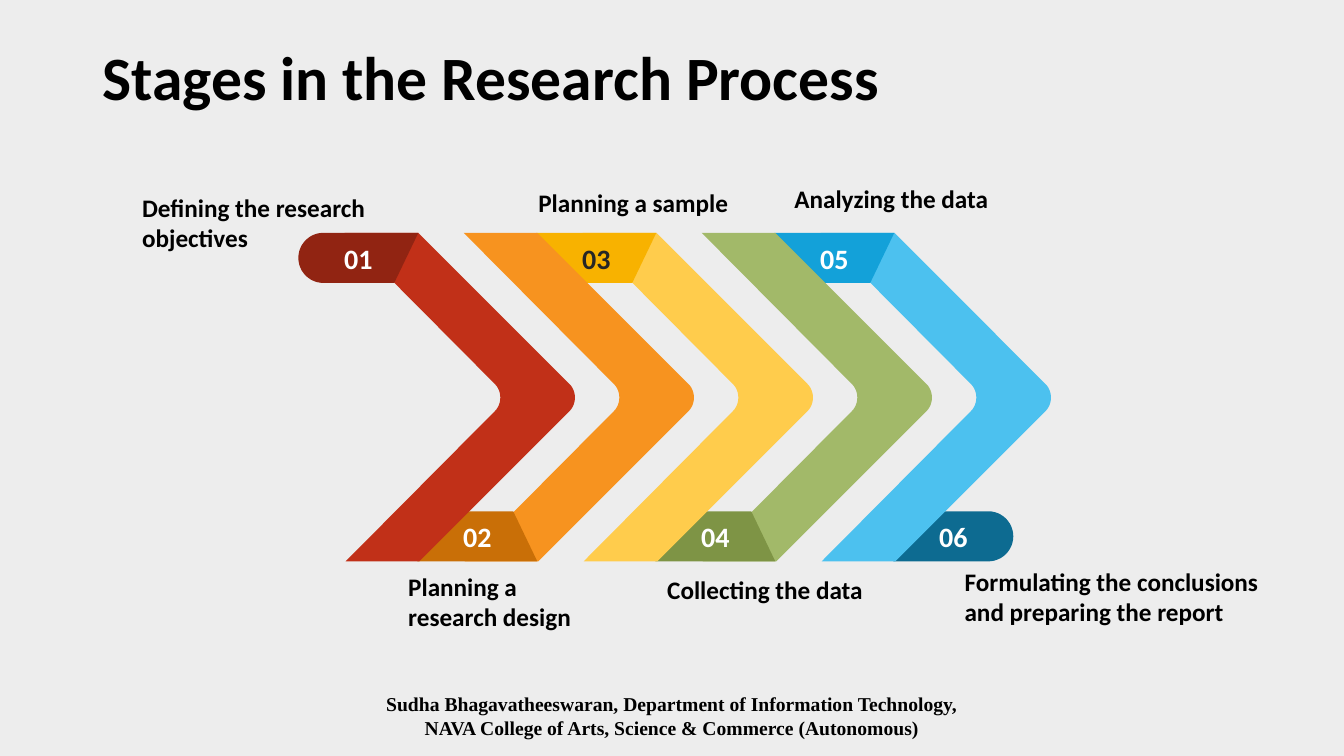
"""Build a slide of six research stages on interlocking chevrons."""
import math
from pptx import Presentation, util as u
from pptx.dml.color import RGBColor
from pptx.enum import text as t
from pptx.oxml.ns import qn

TITLE = "Stages in the Research Process"
CREDIT = ["Sudha Bhagavatheeswaran, Department of Information Technology,",
          "NAVA College of Arts, Science & Commerce (Autonomous)"]
BACK = "EDEDED"
TABS = [("01", "912412", "FFFFFF"), ("02", "C96F07", "FFFFFF"),
        ("03", "F8B200", "262626"), ("04", "7E9445", "FFFFFF"),
        ("05", "13A1D9", "FFFFFF"), ("06", "0D6B91", "FFFFFF")]
BANDS = ["C13018", "F7931F", "FFCC4C", "A2B969", "4CC1EF"]
LABELS = [("Defining the research objectives", 101.5, 133.2, 175.7, 51),
          ("Planning a research design", 291.6, 403.9, 119.5, 51),
          ("Planning a sample", 384.5, 129.6, 149.8, 29),
          ("Collecting the data", 476.6, 406.1, 146.2, 29),
          ("Analyzing the data", 567.4, 127.4, 157, 29),
          ("Formulating the conclusions and preparing the report",
           689, 400.3, 222.5, 51)]

TOP, HIGH, STEP = 166.3, 234.7, 85
BAND_X, TAB_X = 246.2, 213.1
TAB_W, TAB_H, RAD = 85.7, 35.8, 17.9
CUT, SLANT = 35.5, 68.5


def paint(fill, hue):
    fill.solid()
    fill.fore_color.rgb = RGBColor.from_string(hue)


def write(shape, lines, size, hue="000000", font="Calibri", align=t.PP_ALIGN.LEFT,
          anchor=t.MSO_ANCHOR.MIDDLE, inset=(7.2, 3.6), space=None):
    frame = shape.text_frame
    frame.word_wrap = True
    frame.vertical_anchor = anchor
    frame.margin_left = frame.margin_right = u.Pt(inset[0])
    frame.margin_top = frame.margin_bottom = u.Pt(inset[1])
    frame.text = "\n".join(lines)
    for para in frame.paragraphs:
        para.alignment = align
        para.line_spacing = space
        para.font.name, para.font.size, para.font.bold = font, u.Pt(size), True
        para.font.color.rgb = RGBColor.from_string(hue)


def box(left, top, wide, high):
    return slide.shapes.add_textbox(*map(u.Pt, (left, top, wide, high)))


def shape(dots, left, top, hue):
    dots = [(u.Pt(left + x), u.Pt(top + y)) for x, y in dots]
    form = slide.shapes.build_freeform(*dots[0], scale=1.0)
    form.add_line_segments(dots[1:], close=True)
    item = form.convert_to_shape()
    item.shadow.inherit = False
    paint(item.fill, hue)
    item.line.fill.background()
    return item


def bend(x, top, low, push=5.2, count=12):
    """Return points on a cubic curve that bulges right between two heights."""
    dots = []
    for i in range(count + 1):
        k = i / count
        ease = k * k * (3 - 2 * k)
        span = low - top
        y = top + span * ease + 3 * k * (1 - k) * (1 - 2 * k) * push
        dots.append((x + 3 * k * (1 - k) * push, y))
    return dots


def round_end(mid, side, count=24):
    """Return a half circle from top to bottom on the given side."""
    turns = [math.pi * i / count for i in range(count + 1)]
    return [(mid + side * RAD * math.sin(a), RAD - RAD * math.cos(a)) for a in turns]


def band(num):
    dots = [(0, 0), (52.6, 0), *bend(160.6, 108, 127.4), (53.3, HIGH),
            (0.7, HIGH), *bend(107.3, 108, 127.4)[::-1]]
    shape(dots, BAND_X + num * STEP, TOP, BANDS[num])


def tab(num):
    name, hue, ink = TABS[num]
    low = num % 2
    if num == 0:
        dots = [(TAB_W, 0), (SLANT, TAB_H), *round_end(RAD, -1)[::-1]]
    elif num == len(TABS) - 1:
        dots = [(0, TAB_H), (CUT, 0), *round_end(TAB_W - RAD, 1)]
    else:
        dots = [(CUT, TAB_H), (0, 0), (TAB_W, 0), (SLANT, TAB_H)]
        if low:
            dots = [(x, TAB_H - y) for x, y in dots]
    item = shape(dots, TAB_X + num * STEP, TOP + low * (HIGH - TAB_H), hue)
    write(item, [name], 20, ink, align=t.PP_ALIGN.CENTER, inset=(3, 3))


deck = Presentation()
deck.slide_width, deck.slide_height = u.Pt(960), u.Pt(540)
slide = deck.slides.add_slide(deck.slide_layouts[6])
paint(slide.background.fill, BACK)

write(box(66, 28.8, 828, 57.6), [TITLE], 44, space=0.9)
for num in reversed(range(len(TABS))):
    if num < len(BANDS):
        band(num)
    tab(num)
for words, *place in LABELS:
    write(box(*place), [words], 18, anchor=t.MSO_ANCHOR.BOTTOM, inset=(0, 3.6))
write(box(0, 492.5, 960, 37.4), CREDIT, 14, font="Times New Roman",
      align=t.PP_ALIGN.CENTER)

deck.save("out.pptx")
